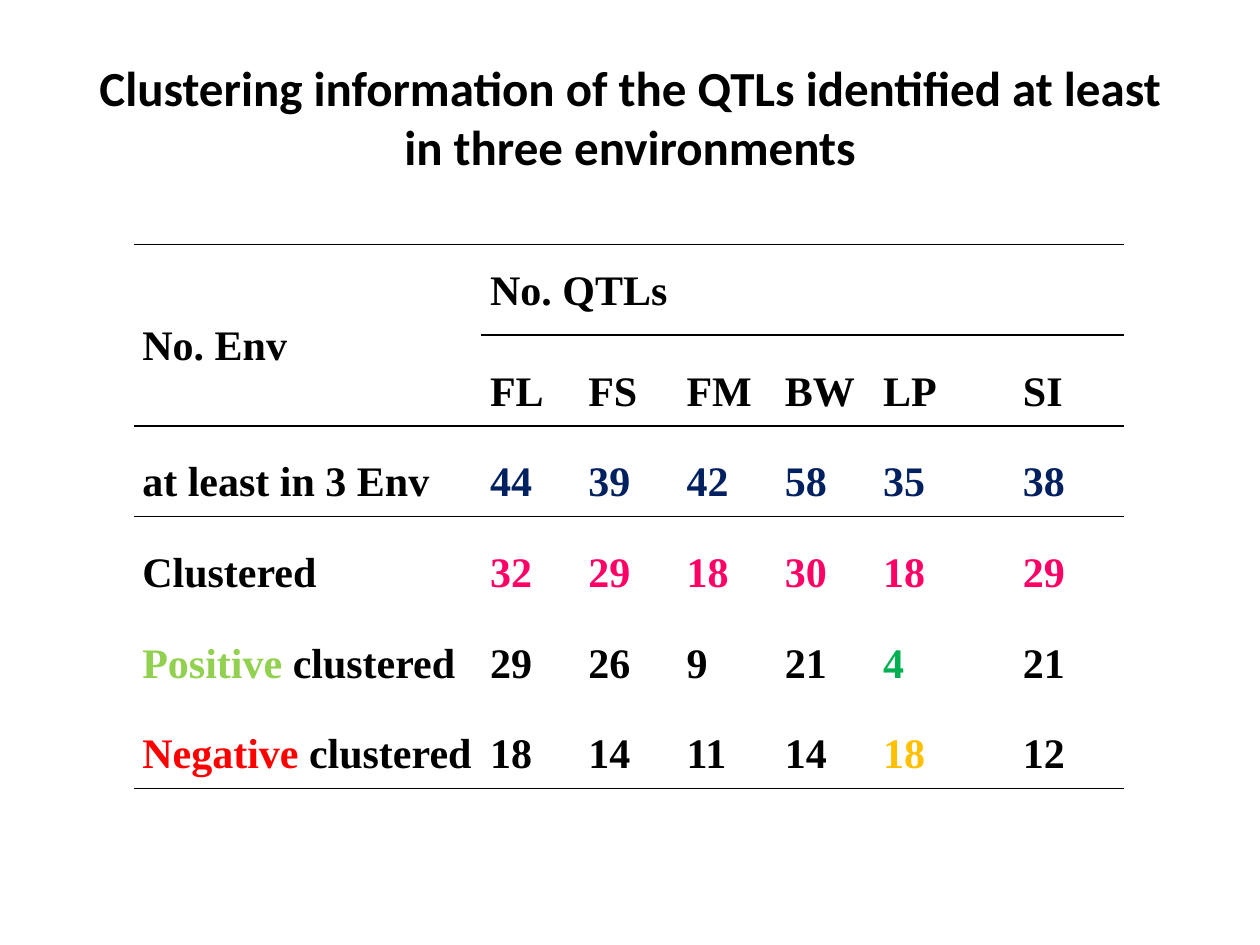
from lxml.etree import SubElement
from pptx import Presentation
from pptx.dml.color import RGBColor
from pptx.enum.text import MSO_ANCHOR, PP_ALIGN
from pptx.oxml.ns import qn
from pptx.util import Inches, Pt

THEME = {
    "ink": "000000", "total": "002060", "clustered": "FF0066",
    "positive": "92D050", "negative": "FF0000",
    "low": "00B050", "high": "FFC000",
    "title": {"name": "Calibri", "size": Pt(28), "bold": True},
    "body": {"name": "Times New Roman", "size": Pt(24), "bold": True},
    "rule": Pt(1), "no_style": "{2D5ABB26-0587-4C30-8999-92F81FD0307C}",
}
TITLE = "Clustering information of the QTLs identified at least in three environments"
HEADER = [
    ["No. Env", "No. QTLs"],
    ["", "FL", "FS", "FM", "BW", "LP", "SI"],
]
BODY = [
    ("at least in 3 Env", "total", [44, 39, 42, 58, 35, 38]),
    ("Clustered", "clustered", [32, 29, 18, 30, 18, 29]),
    ([("Positive", "positive"), (" clustered", "ink")], "ink",
     [29, 26, 9, 21, (4, "low"), 21]),
    ([("Negative", "negative"), (" clustered", "ink")], "ink",
     [18, 14, 11, 14, (18, "high"), 12]),
]
COLS = [2.76, 0.78, 0.78, 0.78, 0.78, 1.11, 0.87]
ROW_H = 0.72
MERGES = [((0, 0), (1, 0)), ((0, 1), (0, 6))]
RULES = {0: 0, 1: 1, 2: 0, 6: 0}


def apply(obj, values):
    for key, value in values.items():
        setattr(obj, key, value)


def add_run(p, text, style, color="ink"):
    r = p.add_run()
    r.text = str(text)
    apply(r.font, THEME[style])
    r.font.color.rgb = RGBColor.from_string(THEME[color])


def as_runs(value, color="ink"):
    if isinstance(value, list):
        return value
    return [value if isinstance(value, tuple) else (value, color)]


def add_rule(cell, side):
    ln = SubElement(cell._tc.get_or_add_tcPr(), qn(f"a:ln{side}"), w=str(THEME["rule"]))
    fill = SubElement(ln, qn("a:solidFill"))
    SubElement(fill, qn("a:srgbClr"), val=THEME["ink"])


def add_title(s):
    tf = s.shapes.add_textbox(Inches(0.5), Inches(0.3), Inches(9), Inches(1.25)).text_frame
    apply(tf, {"word_wrap": True, "vertical_anchor": MSO_ANCHOR.MIDDLE})
    p = tf.paragraphs[0]
    p.alignment = PP_ALIGN.CENTER
    add_run(p, TITLE, "title")


def add_qtl_table(s):
    rows = [[as_runs(v) for v in row] for row in HEADER]
    rows += [[as_runs(label)] + [as_runs(v, color) for v in values]
             for label, color, values in BODY]
    frame = s.shapes.add_table(len(rows), len(COLS), Inches(1.06), Inches(1.94),
                               Inches(sum(COLS)), Inches(ROW_H * len(rows)))
    table = frame.table
    apply(table, {"first_row": False, "horz_banding": False})
    table._tbl.tblPr[0].text = THEME["no_style"]
    for col, width in zip(table.columns, COLS):
        col.width = Inches(width)
    for row in table.rows:
        row.height = Inches(ROW_H)
    for first, last in MERGES:
        table.cell(*first).merge(table.cell(*last))
    for i in range(len(rows)):
        for j in range(len(COLS)):
            cell = table.cell(i, j)
            bottom = i + (cell.span_height if cell.is_merge_origin else 1)
            for side, edge in (("T", i), ("B", bottom)):
                if j >= RULES.get(edge, len(COLS)):
                    add_rule(cell, side)
            cell.fill.background()
            anchor = MSO_ANCHOR.TOP if (i, j) == (0, 1) else MSO_ANCHOR.MIDDLE
            apply(cell, {"margin_left": Inches(0.07), "margin_right": Inches(0.07),
                         "margin_top": 0, "margin_bottom": 0, "vertical_anchor": anchor})
            if cell.is_spanned:
                continue
            p = cell.text_frame.paragraphs[0]
            apply(p, {"alignment": PP_ALIGN.JUSTIFY, "line_spacing": 1.5})
            for text, color in rows[i][j]:
                add_run(p, text, "body", color)


def main():
    prs = Presentation()
    apply(prs, {"slide_width": Inches(10), "slide_height": Inches(7.5)})
    s = prs.slides.add_slide(prs.slide_layouts[6])
    add_title(s)
    add_qtl_table(s)
    prs.save("out.pptx")


if __name__ == "__main__":
    main()
